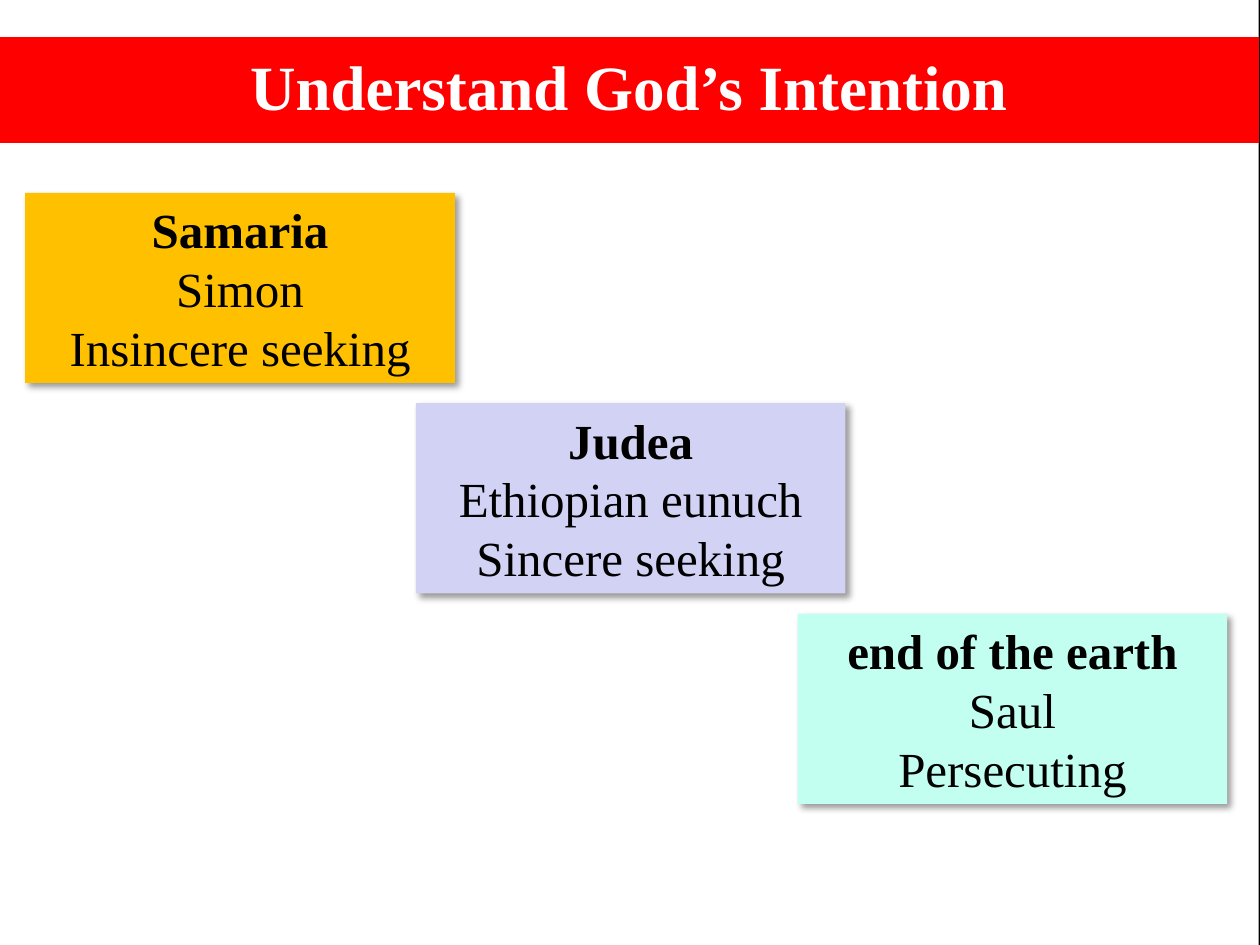
from dataclasses import dataclass

from lxml.etree import SubElement
from pptx import Presentation
from pptx.dml.color import RGBColor
from pptx.enum.shapes import MSO_SHAPE
from pptx.enum.text import MSO_ANCHOR, MSO_AUTO_SIZE, PP_ALIGN
from pptx.oxml.ns import qn
from pptx.util import Pt


@dataclass(frozen=True)
class Theme:
    font: str = "Times New Roman"
    title_size: int = 36
    card_size: int = 28
    backdrop: str = "000000"
    paper: str = "FFFFFF"
    banner: str = "FF0000"
    ink: str = "000000"
    title_ink: str = "FFFFFF"
    shadow: str = "000000"
    samaria: str = "FFC000"
    judea: str = "D2D2F4"
    earth: str = "C2FFF0"


class SlideBuilder:
    """Draws the parts of one slide in one theme."""

    def __init__(self, slide, theme):
        self.slide = slide
        self.theme = theme
        self.fill(slide.background, theme.backdrop)

    def fill(self, part, color):
        part.fill.solid()
        part.fill.fore_color.rgb = RGBColor.from_string(color)

    def box(self, left, top, width, height, color):
        box = self.slide.shapes.add_shape(
            MSO_SHAPE.RECTANGLE, Pt(left), Pt(top), Pt(width), Pt(height))
        self.fill(box, color)
        box.line.fill.background()
        box.shadow.inherit = False
        return box

    def set_text(self, frame, lines, size, color):
        frame.text = "\n".join(lines)
        frame.word_wrap = True
        frame.auto_size = MSO_AUTO_SIZE.SHAPE_TO_FIT_TEXT
        frame.vertical_anchor = MSO_ANCHOR.MIDDLE
        for index, paragraph in enumerate(frame.paragraphs):
            paragraph.alignment = PP_ALIGN.CENTER
            paragraph.font.name = self.theme.font
            paragraph.font.size = Pt(size)
            paragraph.font.bold = index == 0
            paragraph.font.color.rgb = RGBColor.from_string(color)

    def paper(self, left, top, width, height):
        sheet = self.box(left, top, width, height, self.theme.paper)
        self.slide.shapes.title.element.addprevious(sheet.element)

    def title(self, text, left, top, width, height):
        banner = self.slide.shapes.title
        banner.left, banner.top = Pt(left), Pt(top)
        banner.width, banner.height = Pt(width), Pt(height)
        self.fill(banner, self.theme.banner)
        banner.line.color.rgb = RGBColor.from_string(self.theme.banner)
        banner.line.width = Pt(0.75)
        self.set_text(banner.text_frame, [text], self.theme.title_size, self.theme.title_ink)
        heading = banner.text_frame.paragraphs[0]
        heading.line_spacing = 0.9
        heading.space_after = Pt(6)

    def cast_shadow(self, shape):
        effects = shape.element.spPr.find(qn("a:effectLst"))
        shadow = SubElement(effects, qn("a:outerShdw"), blurRad=str(Pt(4)),
                            dist=str(Pt(3)), dir="2700000", algn="tl", rotWithShape="0")
        color = SubElement(shadow, qn("a:srgbClr"), val=self.theme.shadow)
        SubElement(color, qn("a:alpha"), val="40000")

    def card(self, left, top, width, height, color, lines):
        card = self.box(left, top, width, height, color)
        self.cast_shadow(card)
        self.set_text(card.text_frame, lines, self.theme.card_size, self.theme.ink)


def main():
    theme = Theme()
    deck = Presentation()
    deck.slide_width, deck.slide_height = Pt(720), Pt(540)
    builder = SlideBuilder(deck.slides.add_slide(deck.slide_layouts[5]), theme)
    builder.paper(-0.72, 0, 720, 540)
    builder.title("Understand God’s Intention", -0.72, 28.08, 720, 46.8)

    places = [
        (14.4, theme.samaria, ["Samaria", "Simon", "Insincere seeking"]),
        (237.6, theme.judea, ["Judea", "Ethiopian eunuch", "Sincere seeking"]),
        (455.76, theme.earth, ["end of the earth", "Saul", "Persecuting"]),
    ]
    for step, (left, color, lines) in enumerate(places):
        builder.card(left, 110.16 + step * 120.24, 245.52, 108.72, color, lines)
    deck.save("out.pptx")


if __name__ == "__main__":
    main()
